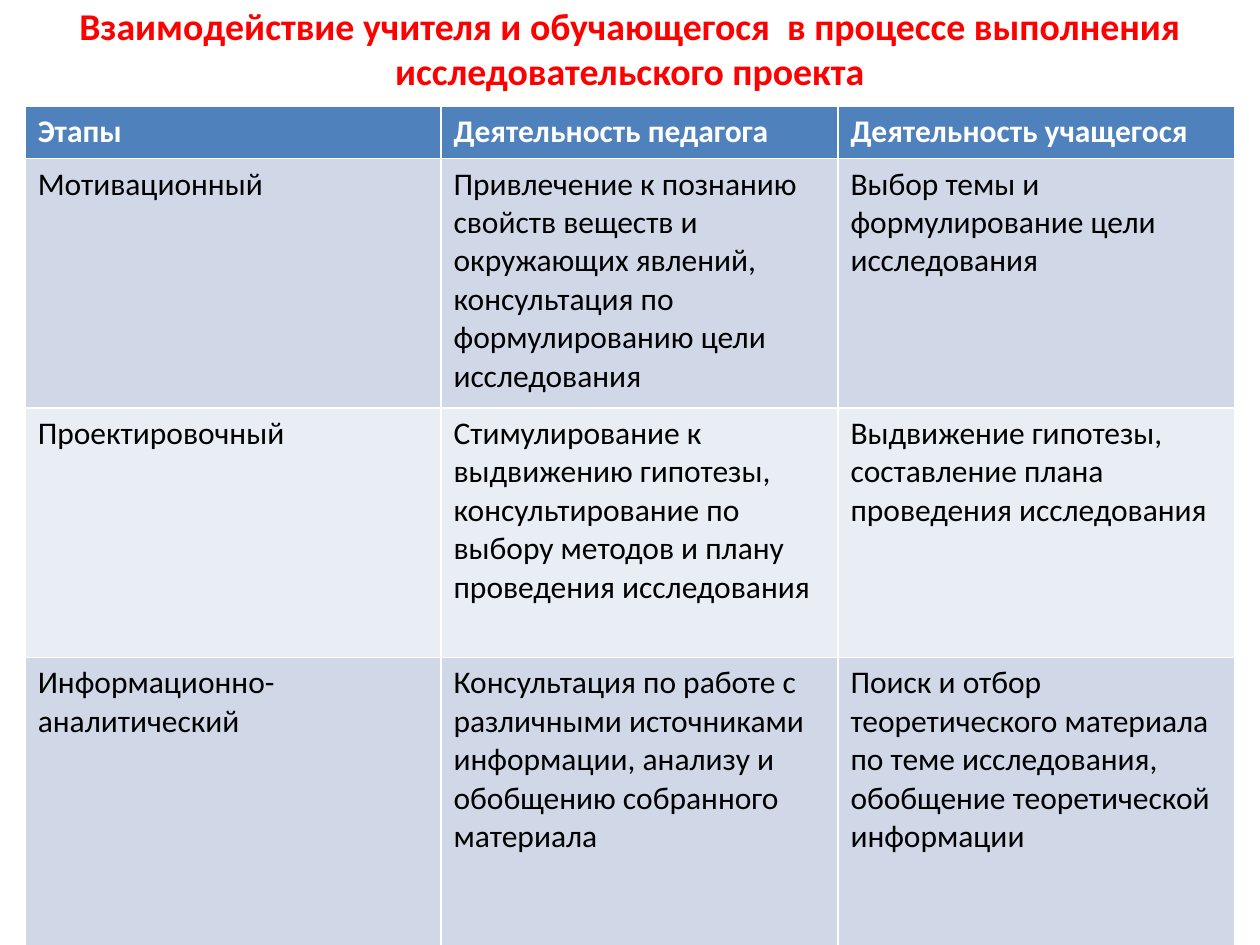
from pptx import Presentation
from pptx import util as u
from pptx.dml.color import RGBColor
from pptx.enum import text

COLORS = {
    "title": "FF0000",
    "header": "4F81BD",
    "header_text": "FFFFFF",
    "odd_row": "D0D8E8",
    "even_row": "E9EDF4",
    "body_text": "000000",
}
FONT = "Calibri"
COLUMN_WIDTHS = [3.3, 3.15, 3.15]
ROW_HEIGHTS = [0.42, 1.98, 1.98, 2.29]

TITLE = "Взаимодействие учителя и обучающегося  в процессе выполнения исследовательского проекта"
STAGES = [
    ["Этапы", "Деятельность педагога", "Деятельность учащегося"],
    ["Мотивационный",
     "Привлечение к познанию свойств веществ и окружающих явлений, "
     "консультация по формулированию цели исследования",
     "Выбор темы и формулирование цели исследования"],
    ["Проектировочный",
     "Стимулирование к выдвижению гипотезы, консультирование по выбору "
     "методов и плану проведения исследования",
     "Выдвижение гипотезы, составление плана проведения исследования"],
    ["Информационно-аналитический",
     "Консультация по работе с различными источниками информации, анализу "
     "и обобщению собранного материала",
     "Поиск и отбор теоретического материала по теме исследования, "
     "обобщение теоретической информации"],
]


def color(name):
    return RGBColor.from_string(COLORS[name])


def style_font(font, size, color_name, bold):
    font.name = FONT
    font.size = u.Pt(size)
    font.bold = bold
    font.color.rgb = color(color_name)


def set_title(slide):
    title = slide.shapes.title
    title.left, title.top = u.Inches(0.5), u.Inches(0)
    title.width, title.height = u.Inches(9), u.Inches(0.76)
    frame = title.text_frame
    frame.text = TITLE
    frame.auto_size = text.MSO_AUTO_SIZE.NONE
    frame.vertical_anchor = text.MSO_ANCHOR.MIDDLE
    heading = frame.paragraphs[0]
    heading.alignment = text.PP_ALIGN.CENTER
    style_font(heading.font, 21.6, "title", True)


def fill_cell(cell, wording, row):
    header = row == 0
    background = "header" if header else "odd_row" if row % 2 else "even_row"
    cell.fill.solid()
    cell.fill.fore_color.rgb = color(background)
    cell.text = wording
    style_font(cell.text_frame.paragraphs[0].font, 18,
               "header_text" if header else "body_text", header)


def add_stage_table(slide):
    # The default table style supplies the white rules between cells
    table = slide.shapes.add_table(
        len(STAGES), len(COLUMN_WIDTHS), u.Inches(0.2), u.Inches(0.84),
        u.Inches(sum(COLUMN_WIDTHS)), u.Inches(sum(ROW_HEIGHTS))).table
    for column, width in zip(table.columns, COLUMN_WIDTHS):
        column.width = u.Inches(width)
    for row, height in zip(table.rows, ROW_HEIGHTS):
        row.height = u.Inches(height)
    for r, stage in enumerate(STAGES):
        for c, wording in enumerate(stage):
            fill_cell(table.cell(r, c), wording, r)


def main():
    deck = Presentation()
    deck.slide_width, deck.slide_height = u.Inches(10), u.Inches(7.5)
    slide = deck.slides.add_slide(deck.slide_layouts[5])  # title only
    set_title(slide)
    add_stage_table(slide)
    deck.save("out.pptx")


if __name__ == "__main__":
    main()
